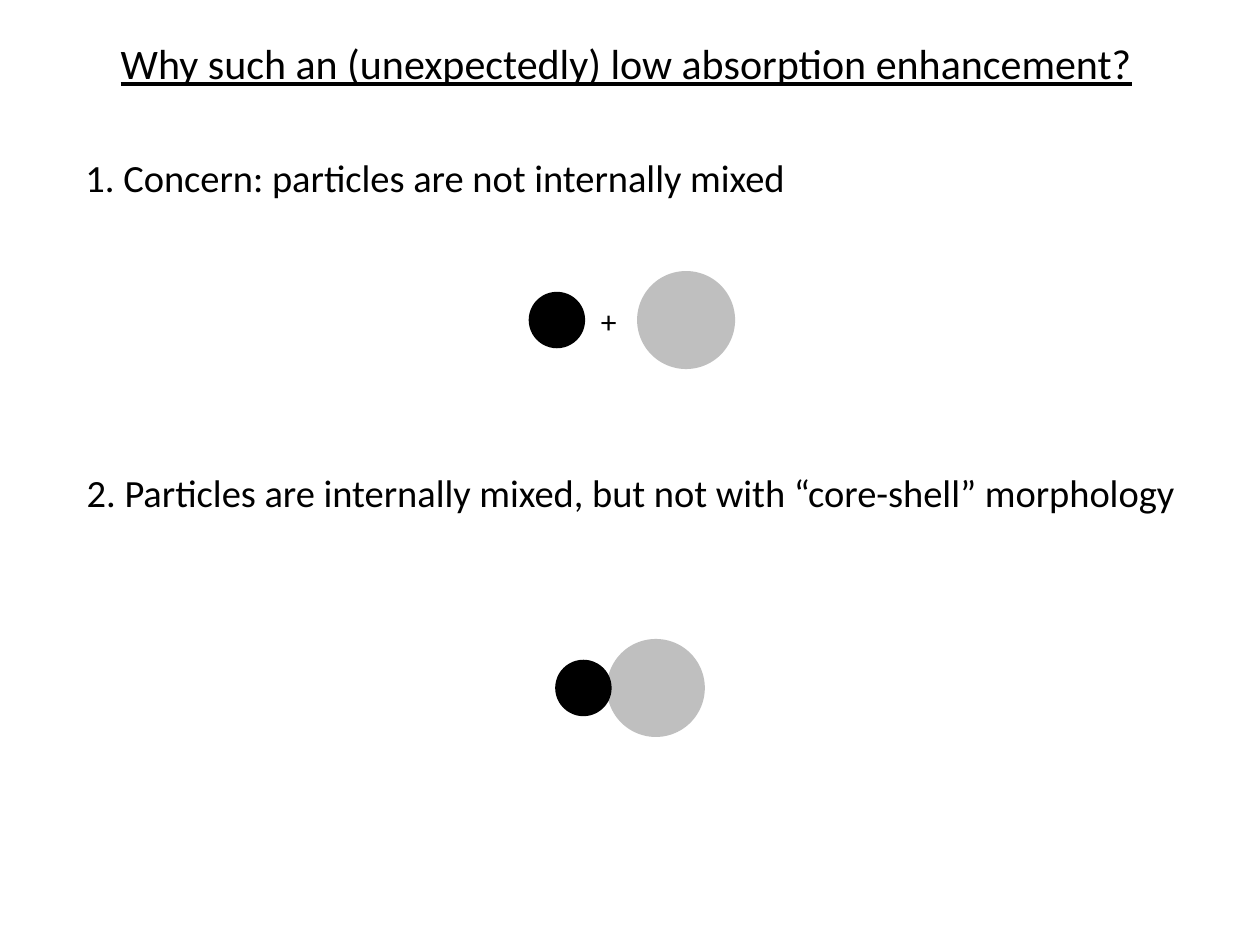
from dataclasses import dataclass

from pptx import Presentation
from pptx.dml.color import RGBColor
from pptx.enum.shapes import MSO_SHAPE
from pptx.enum.text import MSO_AUTO_SIZE
from pptx.util import Inches, Pt


@dataclass(frozen=True)
class Theme:
    font: str = "Calibri"
    ink: str = "000000"
    paper: str = "FFFFFF"
    shell: str = "BFBFBF"
    title: int = 24
    body: int = 22
    sign: int = 18
    edge: int = 2


class Deck:
    def __init__(self, theme):
        self.theme = theme
        self.prs = Presentation()
        self.prs.slide_width = Inches(10)
        self.prs.slide_height = Inches(7.5)
        self.slide = self.prs.slides.add_slide(self.prs.slide_layouts[6])
        back = self.slide.background.fill
        back.solid()
        back.fore_color.rgb = RGBColor.from_string(theme.paper)

    def text(self, words, box, size, wrap=False, under=None):
        shape = self.slide.shapes.add_textbox(*map(Inches, box))
        frame = shape.text_frame
        frame.word_wrap = wrap
        frame.auto_size = MSO_AUTO_SIZE.SHAPE_TO_FIT_TEXT
        run = frame.paragraphs[0].add_run()
        run.text = words
        font = run.font
        font.name = self.theme.font
        font.size = Pt(size)
        font.underline = under
        font.color.rgb = RGBColor.from_string(self.theme.ink)

    def ball(self, left, mid, size, color):
        """Draw a circle centred vertically on mid."""
        shape = self.slide.shapes.add_shape(
            MSO_SHAPE.OVAL, Inches(left), Inches(mid - size / 2),
            Inches(size), Inches(size))
        shape.shadow.inherit = False
        tint = RGBColor.from_string(color)
        shape.fill.solid()
        shape.fill.fore_color.rgb = tint
        shape.line.color.rgb = tint
        shape.line.width = Pt(self.theme.edge)

    def pair(self, core, shell, mid):
        """Draw a black core in front of a grey particle."""
        self.ball(shell, mid, 0.75, self.theme.shell)
        self.ball(core, mid, 0.42, self.theme.ink)


def main():
    theme = Theme()
    deck = Deck(theme)
    deck.text("Why such an (unexpectedly) low absorption enhancement?",
              (0.86, 0.25, 8.3, 0.5), theme.title, under=True)
    deck.text("1. Concern: particles are not internally mixed",
              (0.58, 1.17, 5.81, 0.47), theme.body)
    deck.pair(core=4.21, shell=5.07, mid=2.54)
    deck.text("+", (4.67, 2.35, 0.26, 0.4), theme.sign, wrap=True)
    deck.text("2. Particles are internally mixed, but not with “core-shell” morphology",
              (0.59, 3.67, 8.94, 0.47), theme.body)
    deck.pair(core=4.42, shell=4.83, mid=5.46)
    deck.prs.save("out.pptx")


if __name__ == "__main__":
    main()
